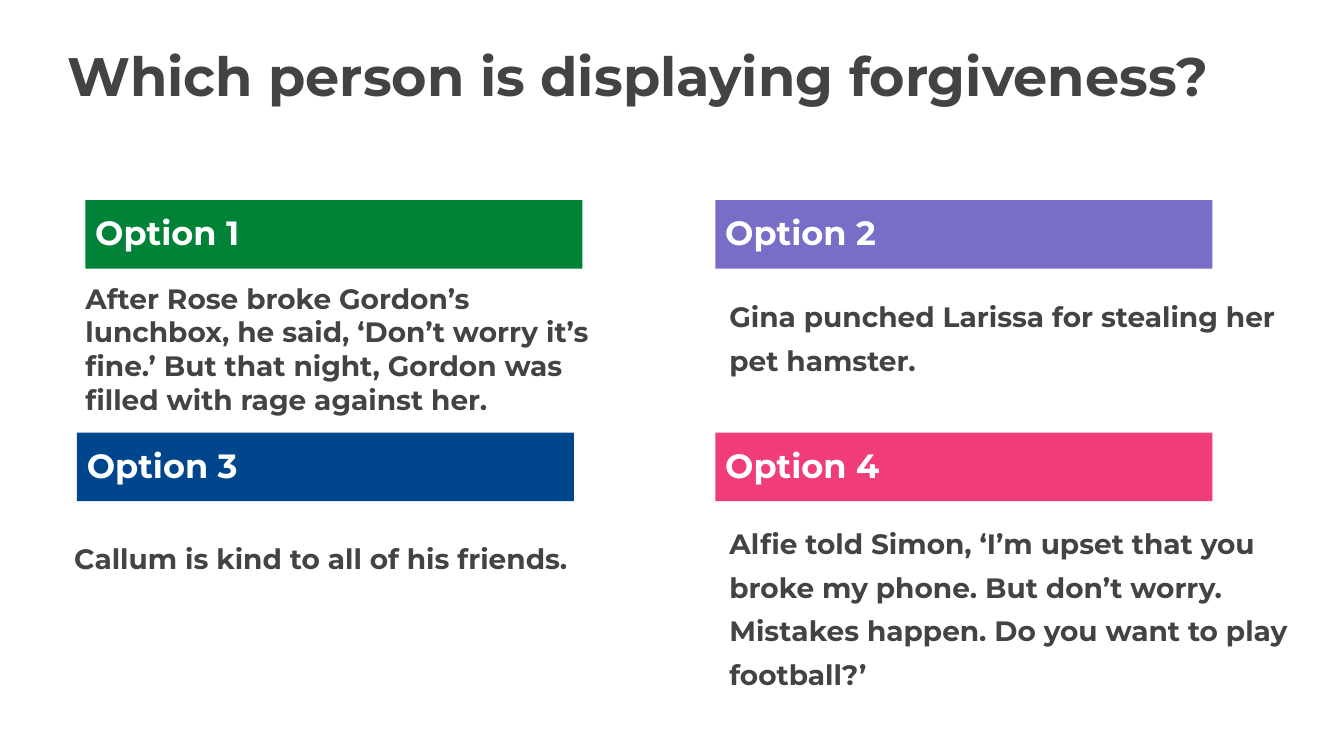
import pptx
import pptx.util
import pptx.dml.color
import pptx.enum.shapes
import pptx.enum.text

PX = 9525  # 96 px to the inch
FONT = "Montserrat"
COLORS = {
    "text": "434343",
    "white": "FFFFFF",
    "green": "008237",
    "purple": "786EC8",
    "blue": "00468C",
    "pink": "F03C78",
}
BAR_SIZE = (355, 49)
SPACED = {"line_spacing": 1.3, "space_after": pptx.util.Pt(10)}
TIGHT = {"line_spacing": 1.0}

# Heading place, colour, label, body box, body indent, body spacing, body text
OPTIONS = [
    ((61, 143), "green", "Option 1", (61, 201, 372, 78), 0, TIGHT,
     "After Rose broke Gordon’s lunchbox, he said, ‘Don’t worry it’s fine.’ "
     "But that night, Gordon was filled with rage against her."),
    ((511, 143), "purple", "Option 2", (511, 207, 420, 63), 10, SPACED,
     "Gina punched Larissa for stealing her pet hamster."),
    ((55, 309), "blue", "Option 3", (53, 380, 372, 310), 0, SPACED,
     "Callum is kind to all of his friends."),
    ((511, 309), "pink", "Option 4", (511, 369, 436, 129), 10, SPACED,
     "Alfie told Simon, ‘I’m upset that you broke my phone. But don’t worry. "
     "Mistakes happen. Do you want to play football?’"),
]


def rgb(name):
    return pptx.dml.color.RGBColor.from_string(COLORS[name])


def emu(box):
    return [v * PX for v in box]


def write(shape, text, size, color, spacing, indent=0):
    """Put one bold, left-aligned paragraph at the top of a shape."""
    tf = shape.text_frame
    frame = {
        "word_wrap": True,
        "auto_size": pptx.enum.text.MSO_AUTO_SIZE.NONE,
        "vertical_anchor": pptx.enum.text.MSO_ANCHOR.TOP,
        "margin_left": indent * PX,
        "margin_top": 0,
        "margin_right": 0,
        "margin_bottom": 0,
    }
    for name, value in frame.items():
        setattr(tf, name, value)
    p = tf.paragraphs[0]
    p.alignment = pptx.enum.text.PP_ALIGN.LEFT
    for name, value in spacing.items():
        setattr(p, name, value)
    r = p.add_run()
    r.text = text
    font = {"name": FONT, "size": pptx.util.Pt(size), "bold": True}
    for name, value in font.items():
        setattr(r.font, name, value)
    r.font.color.rgb = rgb(color)


def add_title(s, box, text):
    title = s.shapes.title
    title.left, title.top, title.width, title.height = emu(box)
    write(title, text, 29, "text", TIGHT)


def add_option(s, place, color, label, body_box, indent, spacing, text):
    # Coloured heading bar
    bar = s.shapes.add_shape(
        pptx.enum.shapes.MSO_SHAPE.RECTANGLE, *emu(place + BAR_SIZE))
    bar.shadow.inherit = False
    bar.fill.solid()
    bar.fill.fore_color.rgb = rgb(color)
    bar.line.fill.background()
    write(bar, label, 18, "white", SPACED, indent=7)
    # Scenario
    body = s.shapes.add_textbox(*emu(body_box))
    write(body, text, 15, "text", spacing, indent)


def main():
    prs = pptx.Presentation()
    prs.slide_width, prs.slide_height = emu((960, 540))
    s = prs.slides.add_slide(prs.slide_layouts[5])
    add_title(s, (48, 30, 832, 85), "Which person is displaying forgiveness?")
    for option in OPTIONS:
        add_option(s, *option)
    prs.save("out.pptx")


if __name__ == "__main__":
    main()
